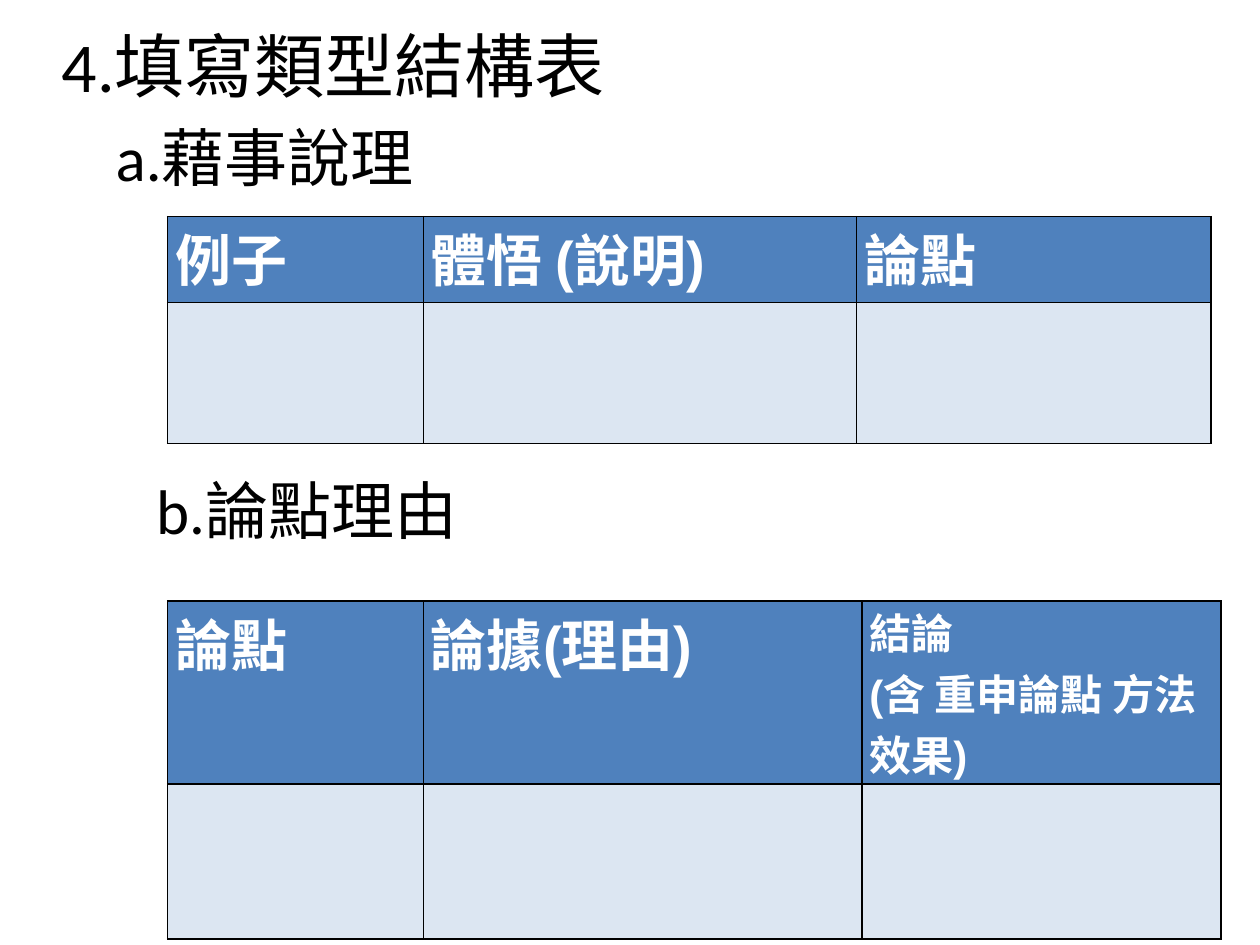
from lxml import etree
from pptx import Presentation
from pptx.dml.color import RGBColor
from pptx.enum.text import MSO_ANCHOR, MSO_AUTO_SIZE, PP_ALIGN
from pptx.oxml.ns import qn
from pptx.util import Inches, Pt

LEFT = PP_ALIGN.LEFT
MIDDLE = MSO_ANCHOR.MIDDLE
NO_FIT = MSO_AUTO_SIZE.NONE
COLORS = {"ink": "000000", "head": "4F81BD", "body": "DCE6F2", "white": "FFFFFF"}


def rgb(name):
    """Return the named colour."""
    return RGBColor.from_string(COLORS[name])


def style(frame, size, font, color, bold=False):
    """Format every run in a text frame."""
    for para in frame.paragraphs:
        para.alignment = LEFT
        for run in para.runs:
            run.font.size = Pt(size)
            run.font.name = font
            run.font.bold = bold
            run.font.color.rgb = rgb(color)


def add_head(shape, box, text, size):
    """Place a heading line in its box."""
    shape.left, shape.top, shape.width, shape.height = map(Inches, box)
    frame = shape.text_frame
    frame.text = text
    frame.word_wrap = True
    frame.auto_size = NO_FIT
    frame.vertical_anchor = MIDDLE
    frame.margin_top = frame.margin_bottom = 0
    style(frame, size, "Calibri", "ink")


def add_edges(cell):
    """Draw thin lines on all four sides of a cell."""
    props = cell._tc.get_or_add_tcPr()
    for spot, side in enumerate(("lnL", "lnR", "lnT", "lnB")):
        line = etree.Element(qn(f"a:{side}"), w=str(Pt(1)))
        fill = etree.SubElement(line, qn("a:solidFill"))
        etree.SubElement(fill, qn("a:srgbClr"), val=COLORS["ink"])
        props.insert(spot, line)


def add_grid(slide, box, cols, rows, heads):
    """Build a table with a header row and an empty row to fill in."""
    table = slide.shapes.add_table(len(rows), len(cols), *map(Inches, box)).table
    for col, width in zip(table.columns, cols):
        col.width = Inches(width)
    for row, height in zip(table.rows, rows):
        row.height = Inches(height)
    for cell in table.iter_cells():
        cell.margin_left = cell.margin_right = Inches(0.06)
        cell.margin_top = cell.margin_bottom = 0
        cell.fill.solid()
        cell.fill.fore_color.rgb = rgb("body")
        add_edges(cell)
    for cell, (text, size, font) in zip(table.rows[0].cells, heads):
        cell.fill.fore_color.rgb = rgb("head")
        cell.text_frame.text = text
        style(cell.text_frame, size, font, "white", True)


def main():
    """Build and save the slide."""
    deck = Presentation()
    deck.slide_width, deck.slide_height = Inches(10), Inches(7.5)
    slide = deck.slides.add_slide(deck.slide_layouts[5])
    add_head(slide.shapes.title, (0.39, 0.14, 8.22, 0.74), "4.填寫類型結構表", 40)
    for left, top, text in ((0.82, 0.89, "a.藉事說理"), (1.14, 3.69, "b.論點理由")):
        box = (left, top, 7, 0.7)
        add_head(slide.shapes.add_textbox(*map(Inches, box)), box, text, 36)
    add_grid(slide, (1.33, 1.72, 8.28, 1.8), (2.03, 3.44, 2.81), (0.68, 1.12),
             (("例子", 32, "Arial"), ("體悟 (說明)", 32, "Arial"),
              ("論點", 32, "Calibri")))
    add_grid(slide, (1.33, 4.77, 8.36, 2.68), (2.03, 3.48, 2.85), (1.45, 1.23),
             (("論點", 32, "Arial"), ("論據(理由)", 32, "Arial"),
              ("結論\n(含 重申論點 方法 效果)", 24, "Arial")))
    deck.save("out.pptx")


if __name__ == "__main__":
    main()
